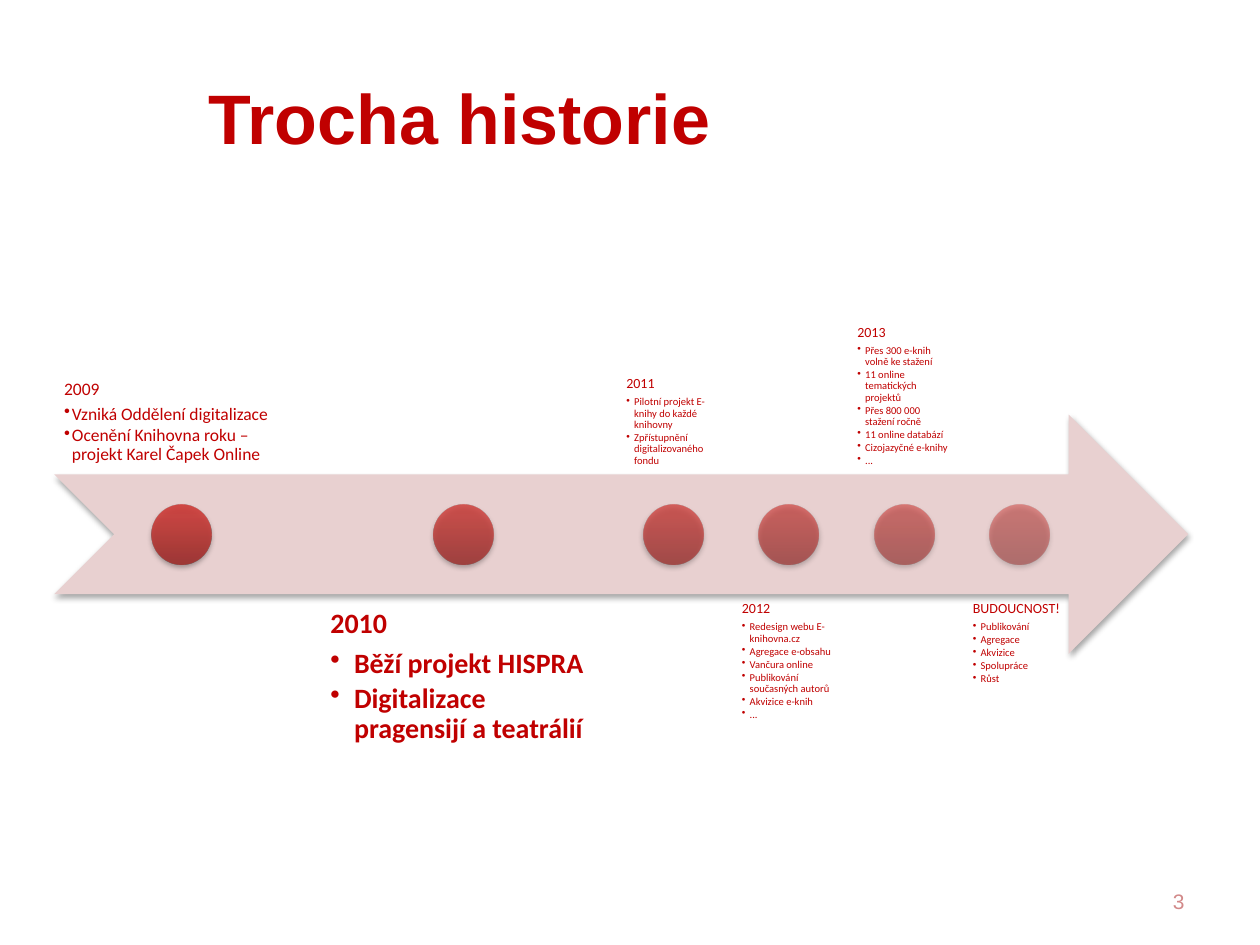
"""Build a slide with a history timeline running along a notched arrow."""
from lxml import etree
from pptx import Presentation
from pptx.dml.color import RGBColor
from pptx.enum.shapes import MSO_SHAPE
from pptx.enum.text import MSO_ANCHOR, PP_ALIGN
from pptx.oxml.ns import qn
from pptx.util import Pt

ARROW, DOT = MSO_SHAPE.NOTCHED_RIGHT_ARROW, MSO_SHAPE.OVAL
TOP, MIDDLE, BOTTOM = MSO_ANCHOR.TOP, MSO_ANCHOR.MIDDLE, MSO_ANCHOR.BOTTOM
LEFT, RIGHT = PP_ALIGN.LEFT, PP_ALIGN.RIGHT
RED = RGBColor(0xC0, 0x00, 0x00)
PALE_RED = RGBColor(0xD2, 0x89, 0x89)
PINK = RGBColor(0xE8, 0xD0, 0xD0)
BLACK = RGBColor(0x00, 0x00, 0x00)
DOT_STOPS = [
    (0, RGBColor(0x9C, 0x2F, 0x2D)),
    (80, RGBColor(0xCB, 0x3E, 0x3A)),
    (100, RGBColor(0xCE, 0x3B, 0x37)),
]

TITLE = "Trocha historie"
PAGE = "3"
EVENTS = [
    ("2009", ["Vzniká Oddělení digitalizace",
              "Ocenění Knihovna roku – projekt Karel Čapek Online"]),
    ("2010", ["Běží projekt HISPRA", "Digitalizace pragensijí a teatrálií"]),
    ("2011", ["Pilotní projekt E-knihy do každé knihovny",
              "Zpřístupnění digitalizovaného fondu"]),
    ("2012", ["Redesign webu E-knihovna.cz", "Agregace e-obsahu",
              "Vančura online", "Publikování současných autorů",
              "Akvizice e-knih", "..."]),
    ("2013", ["Přes 300 e-knih volně ke stažení",
              "11 online tematických projektů",
              "Přes 800 000 stažení ročně", "11 online databází",
              "Cizojazyčné e-knihy", "..."]),
    ("BUDOUCNOST!", ["Publikování", "Agregace", "Akvizice", "Spolupráce",
                     "Růst"]),
]
SMALL = dict(width=62.5, head=8, body=6, indent=4.5, bold=False)
STYLES = [
    dict(width=145.4, head=10, body=10, indent=4.5, bold=False),
    dict(width=170, head=16, body=16, indent=13.5, bold=True),
] + [SMALL] * 4

ARROW_X, ARROW_Y, ARROW_W, ARROW_H = 31, 236.9, 648, 136.8
COLUMN_GAP = 3.5
DOT_SIZE = 34.2


def add_box(slide, x, y, w, h, anchor, inset=None):
    tf = slide.shapes.add_textbox(Pt(x), Pt(y), Pt(w), Pt(h)).text_frame
    tf.word_wrap = True
    tf.vertical_anchor = anchor
    if inset is not None:
        tf.margin_left = tf.margin_right = Pt(inset)
        tf.margin_top = tf.margin_bottom = Pt(inset)
    return tf


def add_text(tf, text, size, font="Calibri", color=RED, bold=False,
             align=LEFT, spacing=1, after=0, indent=None):
    p = tf.paragraphs[0]
    if p.runs:
        p = tf.add_paragraph()
    p.alignment = align
    p.line_spacing = spacing
    p.space_after = Pt(after)
    if indent is not None:
        pPr = p._p.get_or_add_pPr()
        pPr.set("marL", str(Pt(indent)))
        pPr.set("indent", str(-Pt(indent)))
        etree.SubElement(pPr, qn("a:buChar"), char="•")
    r = p.add_run()
    r.text = text
    r.font.size = Pt(size)
    r.font.name = font
    r.font.bold = bold
    r.font.color.rgb = color


def add_color(parent, color, opacity):
    clr = etree.SubElement(parent, qn("a:srgbClr"), val=str(color))
    etree.SubElement(clr, qn("a:alpha"), val=str(opacity * 1000))


def add_shadowed_shape(slide, kind, x, y, w, h):
    sp = slide.shapes.add_shape(kind, Pt(x), Pt(y), Pt(w), Pt(h))
    sp.line.fill.background()
    sp.shadow.inherit = False
    effects = sp._element.spPr.find(qn("a:effectLst"))
    shadow = etree.SubElement(
        effects, qn("a:outerShdw"), blurRad=str(Pt(3.1)), dist=str(Pt(1.8)),
        dir="5400000", rotWithShape="0")
    add_color(shadow, BLACK, 35)
    return sp


def fill_dot(sp, opacity):
    sp.fill.gradient()
    sp.fill.gradient_angle = 90
    stops = sp._element.spPr.find(qn("a:gradFill")).find(qn("a:gsLst"))
    for stop in list(stops):
        stops.remove(stop)
    for position, color in DOT_STOPS:
        stop = etree.SubElement(stops, qn("a:gs"), pos=str(position * 1000))
        add_color(stop, color, opacity)


def add_event(slide, x, y, anchor, event, style):
    year, items = event
    head, body, bold = style["head"], style["body"], style["bold"]
    tf = add_box(slide, x, y, style["width"], ARROW_H, anchor, 0.56 * head)
    add_text(tf, year, head, bold=bold, spacing=0.9, after=0.35 * head)
    for item in items:
        add_text(tf, item, body, bold=bold, spacing=0.9, after=0.15 * body,
                 indent=style["indent"])


def main():
    prs = Presentation()
    prs.slide_width, prs.slide_height = Pt(720), Pt(540)
    slide = prs.slides.add_slide(prs.slide_layouts[6])

    tf = add_box(slide, 112.3, 21.6, 571.7, 90, MIDDLE)
    add_text(tf, TITLE, 40, font="Arial", bold=True)
    tf = add_box(slide, 516, 500.5, 168, 28.75, MIDDLE)
    add_text(tf, PAGE, 12, font="Arial", color=PALE_RED, align=RIGHT)

    arrow = add_shadowed_shape(slide, ARROW, ARROW_X, ARROW_Y, ARROW_W, ARROW_H)
    arrow.fill.solid()
    arrow.fill.fore_color.rgb = PINK

    middle = ARROW_Y + ARROW_H / 2
    band_top, band_bottom = middle - ARROW_H / 4, middle + ARROW_H / 4
    x = ARROW_X
    for i, (event, style) in enumerate(zip(EVENTS, STYLES)):
        if i % 2 == 0:
            add_event(slide, x, band_top - ARROW_H, BOTTOM, event, style)
        else:
            add_event(slide, x, band_bottom, TOP, event, style)
        dot = add_shadowed_shape(
            slide, DOT, x + (style["width"] - DOT_SIZE) / 2,
            middle - DOT_SIZE / 2, DOT_SIZE, DOT_SIZE)
        fill_dot(dot, 90 - 8 * i)
        x += style["width"] + COLUMN_GAP

    prs.save("out.pptx")


if __name__ == "__main__":
    main()
